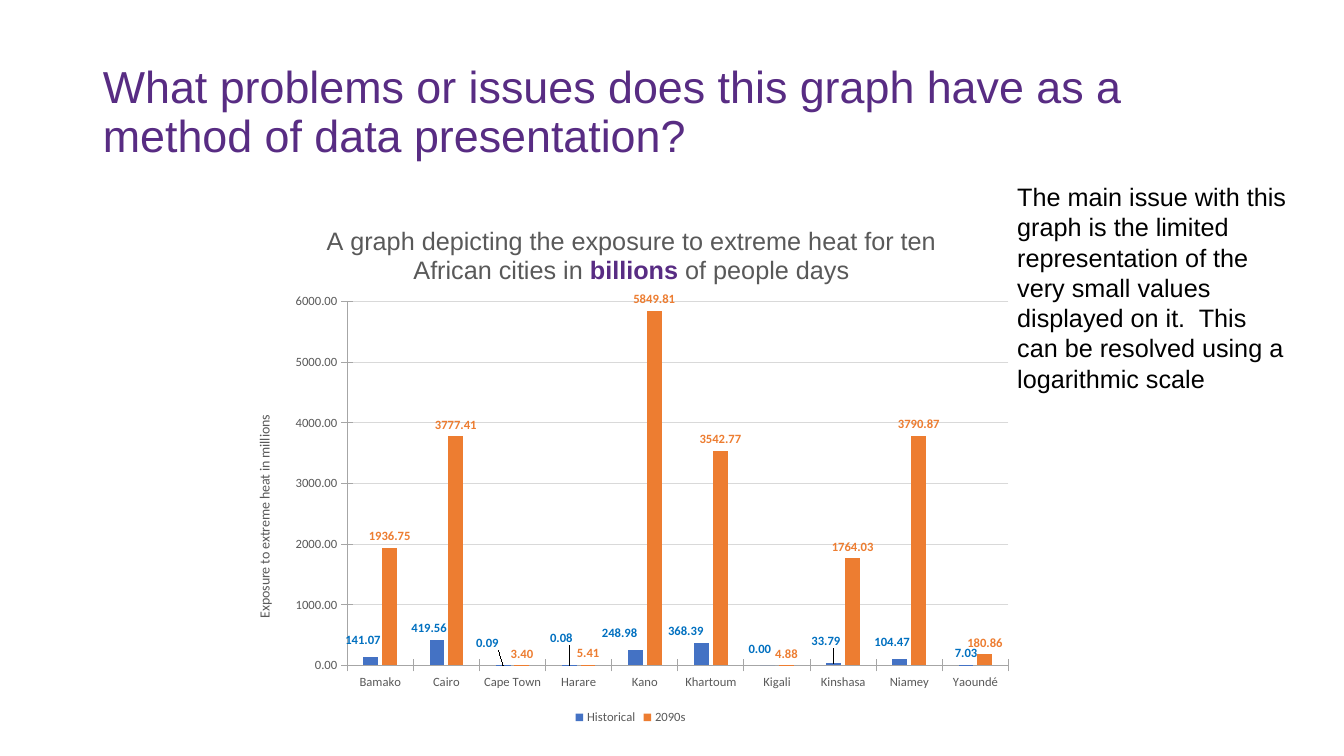
from dataclasses import dataclass
from typing import Optional

from lxml.etree import SubElement
from pptx import Presentation
from pptx.chart.data import CategoryChartData
from pptx.dml.color import RGBColor
from pptx.enum.chart import XL_CHART_TYPE, XL_LABEL_POSITION, XL_LEGEND_POSITION, XL_TICK_MARK
from pptx.enum.text import MSO_ANCHOR, MSO_AUTO_SIZE, PP_ALIGN
from pptx.oxml.ns import qn
from pptx.util import Inches, Pt


@dataclass(frozen=True)
class Theme:
    heading_font: str = "Arial"
    chart_font: str = "Calibri"
    purple: str = "582C83"
    black: str = "000000"
    grey: str = "595959"
    axis: str = "A6A6A6"
    grid: str = "D9D9D9"
    heading: float = 32
    body: float = 18
    axis_title: float = 10
    small: float = 9


@dataclass(frozen=True)
class Period:
    name: str
    values: tuple
    fill: str
    label: str
    label_shifts: tuple = ()


THEME = Theme()
NUMBER_FORMAT = "0.00"
CITIES = ("Bamako", "Cairo", "Cape Town", "Harare", "Kano",
          "Khartoum", "Kigali", "Kinshasa", "Niamey", "Yaoundé")
PERIODS = (
    Period("Historical",
           (141.07, 419.56, 0.09, 0.08, 248.98, 368.39, 0, 33.79, 104.47, 7.03),
           "4472C4", "0070C0",
           ((-0.01, -0.01), (-0.01, 0), (-0.02, -0.02), (-0.01, -0.03), (-0.02, -0.01),
            (-0.02, 0), (-0.01, -0.01), (-0.01, -0.02), (-0.01, -0.01))),
    Period("2090s",
           (1936.75, 3777.41, 3.4, 5.41, 5849.81, 3542.77, 4.88, 1764.03, 3790.87, 180.86),
           "ED7D31", "ED7D31"),
)


def style(font, size: float, color: str, family: str, bold: bool = False) -> None:
    font.size = Pt(size)
    font.name = family
    font.bold = bold
    font.color.rgb = RGBColor.from_string(color)


def add_run(paragraph, text: str, size: float, color: str, family: str,
            bold: bool = False) -> None:
    run = paragraph.add_run()
    run.text = text
    style(run.font, size, color, family, bold)


def style_line(line, color: str) -> None:
    line.color.rgb = RGBColor.from_string(color)
    line.width = Pt(0.75)


def place(parent, x: float, y: float, w: Optional[float] = None, h: Optional[float] = None,
          after: Optional[str] = None, edge: bool = True) -> None:
    for old in parent.findall(qn("c:layout")):
        parent.remove(old)
    layout = SubElement(parent, qn("c:layout"))
    manual = SubElement(layout, qn("c:manualLayout"))
    settings = []
    if w is not None:
        settings.append(("layoutTarget", "inner"))
    if edge:
        settings += [("xMode", "edge"), ("yMode", "edge")]
    settings += [("x", x), ("y", y)]
    if w is not None:
        settings += [("w", w), ("h", h)]
    for tag, value in settings:
        SubElement(manual, qn(f"c:{tag}")).set("val", str(value))
    if after:
        parent.find(qn(after)).addnext(layout)
    else:
        parent.insert(0, layout)


def format_axis(axis) -> None:
    axis.major_tick_mark = XL_TICK_MARK.CROSS
    axis.minor_tick_mark = XL_TICK_MARK.NONE
    style(axis.tick_labels.font, THEME.small, THEME.grey, THEME.chart_font)
    style_line(axis.format.line, THEME.axis)


def format_series(series, period: Period) -> None:
    series.format.fill.solid()
    series.format.fill.fore_color.rgb = RGBColor.from_string(period.fill)
    series.invert_if_negative = False
    labels = series.data_labels
    labels.show_value = True
    labels.number_format = NUMBER_FORMAT
    labels.number_format_is_linked = False
    labels.position = XL_LABEL_POSITION.OUTSIDE_END
    style(labels.font, THEME.small, period.label, THEME.chart_font, True)
    for index, (x, y) in enumerate(period.label_shifts):
        label = series.points[index].data_label
        label.position = XL_LABEL_POSITION.OUTSIDE_END
        style(label.font, THEME.small, period.label, THEME.chart_font, True)
    shifted = labels._element.findall(qn("c:dLbl"))
    for element, (x, y) in zip(shifted, period.label_shifts):
        place(element, x, y, after="c:idx", edge=False)


def add_heat_chart(slide) -> None:
    data = CategoryChartData(number_format=NUMBER_FORMAT)
    data.categories = CITIES
    for period in PERIODS:
        data.add_series(period.name, period.values)
    chart = slide.shapes.add_chart(XL_CHART_TYPE.COLUMN_CLUSTERED, Inches(2.35), Inches(2),
                                   Inches(7.81), Inches(5.23), data).chart
    style(chart.font, THEME.axis_title, THEME.black, THEME.chart_font)

    chart.has_title = True
    heading = chart.chart_title.text_frame.paragraphs[0]
    for text, color, bold in (
            ("A graph depicting the exposure to extreme heat for ten African cities in ",
             THEME.grey, False),
            ("billions", THEME.purple, True),
            (" of people days", THEME.grey, False)):
        add_run(heading, text, THEME.body, color, THEME.heading_font, bold)
    place(chart.chart_title._element, 0.11, 0.04, after="c:tx")

    cities, exposure = chart.category_axis, chart.value_axis
    for axis in (cities, exposure):
        format_axis(axis)
    exposure.minimum_scale = 0
    exposure.maximum_scale = 6000
    exposure.major_unit = 1000
    exposure.tick_labels.number_format = NUMBER_FORMAT
    exposure.tick_labels.number_format_is_linked = False
    style_line(exposure.major_gridlines.format.line, THEME.grid)
    caption = exposure.axis_title.text_frame
    add_run(caption.paragraphs[0], "Exposure to extreme heat in millions",
            THEME.axis_title, THEME.grey, THEME.chart_font)
    caption._txBody.bodyPr.set("rot", "-5400000")
    caption._txBody.bodyPr.set("vert", "horz")
    place(exposure.axis_title._element, 0.02, 0.4, after="c:tx")

    chart.has_legend = True
    chart.legend.position = XL_LEGEND_POSITION.BOTTOM
    chart.legend.include_in_layout = False
    style(chart.legend.font, THEME.small, THEME.grey, THEME.chart_font)

    columns = chart.plots[0]
    columns.gap_width = 219
    columns.overlap = -27
    columns.vary_by_categories = False
    for series, period in zip(columns.series, PERIODS):
        format_series(series, period)
    place(chart.element.find(f".//{qn('c:plotArea')}"), 0.14, 0.19, 0.84, 0.69)


def add_question(slide) -> None:
    question = slide.shapes.title
    question.left, question.top = Inches(0.92), Inches(0.4)
    question.width, question.height = Inches(11.5), Inches(1.45)
    question.text_frame.vertical_anchor = MSO_ANCHOR.MIDDLE
    paragraph = question.text_frame.paragraphs[0]
    paragraph.alignment = PP_ALIGN.LEFT
    paragraph.line_spacing = 0.9
    add_run(paragraph, "What problems or issues does this graph have as a method of "
            "data presentation?", THEME.heading, THEME.purple, THEME.heading_font)


def add_answer(slide) -> None:
    answer = slide.shapes.add_textbox(Inches(9.99), Inches(1.75), Inches(2.89), Inches(2.22))
    answer.text_frame.word_wrap = True
    answer.text_frame.auto_size = MSO_AUTO_SIZE.SHAPE_TO_FIT_TEXT
    add_run(answer.text_frame.paragraphs[0],
            "The main issue with this graph is the limited representation of the very small "
            "values displayed on it.  This can be resolved using a logarithmic scale",
            THEME.body, THEME.black, THEME.heading_font)


def main() -> None:
    deck = Presentation()
    deck.slide_width, deck.slide_height = Inches(13.33), Inches(7.5)
    slide = deck.slides.add_slide(deck.slide_layouts[5])
    add_question(slide)
    add_heat_chart(slide)
    add_answer(slide)
    deck.save("out.pptx")


if __name__ == "__main__":
    main()
